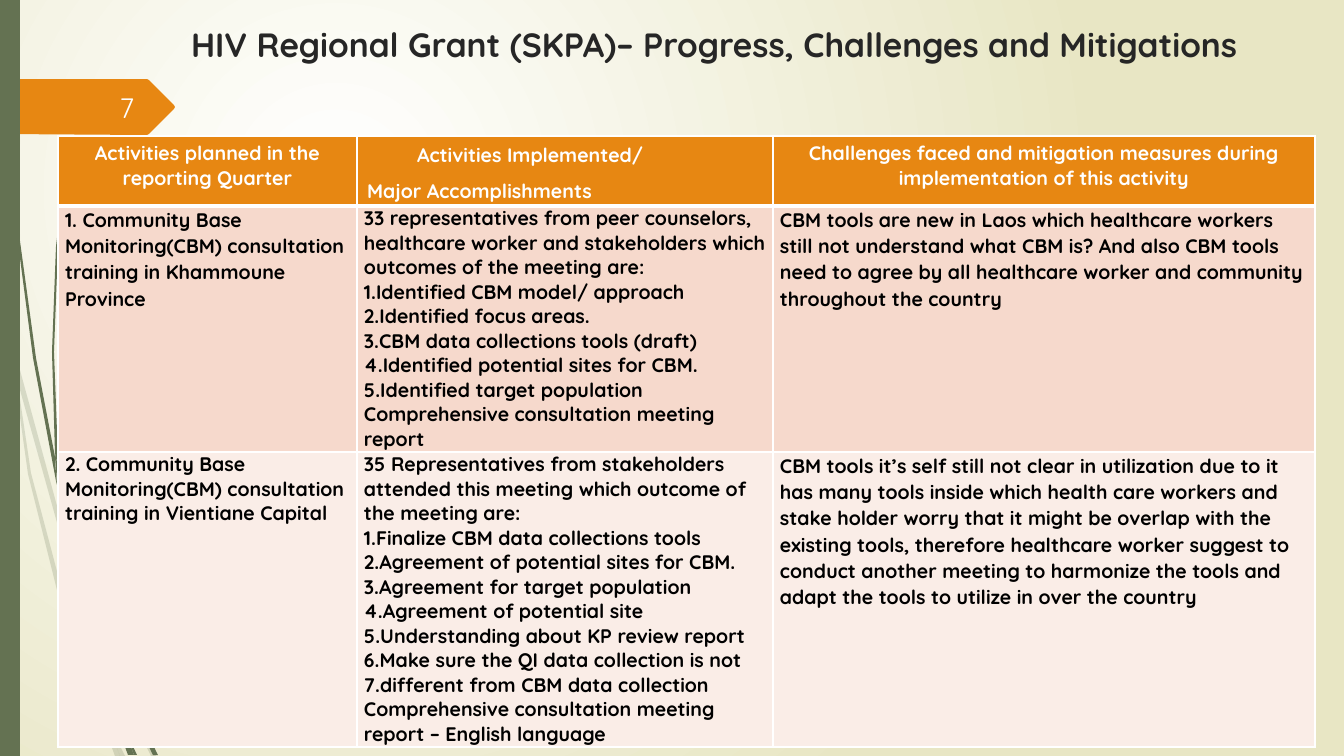
"""Build the regional grant progress slide with its activity table."""
import dataclasses

import lxml.etree
import pptx
import pptx.dml.color
import pptx.enum.shapes
import pptx.enum.text
import pptx.oxml
import pptx.oxml.ns
import pptx.util

PX = 914400 / 100.8
ALIGN = pptx.enum.text.PP_ALIGN
ANCHOR = pptx.enum.text.MSO_ANCHOR
qn = pptx.oxml.ns.qn


@dataclasses.dataclass(frozen=True)
class Theme:
    """Colours, font and type sizes."""
    font: str = "Quicksand"
    green: str = "647252"
    orange: str = "E78712"
    row_fills: tuple = ("E78712", "F6D9CC", "FAEDE7")
    white: str = "FFFFFF"
    cream: str = "E8E6C4"
    number: str = "FEFFFF"
    title: str = "262626"
    body: str = "000000"
    title_pt: int = 24
    number_pt: int = 20
    table_pt: int = 14


theme = Theme()


def add_run(p, text, size, color, bold=True):
    """Add one formatted run."""
    r = p.add_run()
    r.text = text
    r.font.name = theme.font
    r.font.size = pptx.util.Pt(size)
    r.font.bold = bold
    r.font.color.rgb = pptx.dml.color.RGBColor.from_string(color)


def paint(sp, color):
    """Give a shape a flat fill without line or shadow."""
    sp.fill.solid()
    sp.fill.fore_color.rgb = pptx.dml.color.RGBColor.from_string(color)
    sp.line.fill.background()
    sp.shadow.inherit = False


prs = pptx.Presentation()
prs.slide_width, prs.slide_height = round(1344 * PX), round(756 * PX)
s = prs.slides.add_slide(prs.slide_layouts[5])

s.background.fill.gradient()
grad = s.background.fill._fill._gradFill
for child in list(grad):
    grad.remove(child)
stops = lxml.etree.SubElement(grad, qn("a:gsLst"))
for pos, color in ((0, theme.white), (100000, theme.cream)):
    stop = lxml.etree.SubElement(stops, qn("a:gs"), pos=str(pos))
    lxml.etree.SubElement(stop, qn("a:srgbClr"), val=color)
circle = lxml.etree.SubElement(grad, qn("a:path"), path="circle")
lxml.etree.SubElement(circle, qn("a:fillToRect"),
                      l="50000", t="50000", r="100000", b="100000")

faint_stalks = [
    [(11, 353), (9, 325), (0, 284), (0, 301), (10, 347)],
    [(58, 526), (85, 604), (86, 591), (62, 524), (14, 348), (17, 379)],
    [(93, 612), (89, 601), (89, 615), (124, 700), (151, 756), (156, 756), (128, 698)],
    [(120, 756), (125, 756), (106, 717)],
    [(94, 688), (71, 624), (31, 473), (17, 379), (11, 353), (28, 474),
     (66, 626), (93, 699), (102, 720), (100, 713)],
    [(102, 720), (115, 756), (120, 756)],
    [(97, 698), (94, 688), (100, 713), (102, 720), (120, 756), (106, 717)],
]
dark_stalks = [
    [(7, 111), (17, 235), (33, 358), (56, 481), (57, 485), (55, 461), (55, 457),
     (36, 358), (19, 234), (8, 110), (5, 48), (4, 0), (3, 0), (4, 48)],
    [(114, 654), (111, 646), (111, 661), (133, 714), (153, 755), (158, 755), (137, 712)],
    [(111, 697), (99, 662), (73, 560), (65, 509), (57, 481), (69, 561),
     (94, 664), (112, 714), (118, 728), (117, 723)],
    [(60, 476), (58, 457), (54, 352), (58, 247), (64, 195), (71, 142),
     (70, 142), (62, 195), (56, 247), (52, 352), (55, 453)],
    [(134, 755), (137, 755), (123, 725)],
    [(57, 481), (65, 509), (60, 476), (55, 453), (55, 457)],
    [(118, 728), (128, 755), (132, 755)],
    [(117, 712), (111, 697), (117, 723), (118, 728), (131, 755), (134, 755), (123, 725)],
]
number_tag = [(0, 79), (147, 79), (149, 80), (174, 105), (175, 107),
              (174, 109), (149, 134), (147, 135), (0, 134)]
outlines = [(points, theme.green, 20) for points in faint_stalks]
outlines += [(points, theme.green, 100) for points in dark_stalks]
outlines.append((number_tag, theme.orange, 100))
for points, color, opacity in outlines:
    builder = s.shapes.build_freeform(*points[0], scale=PX)
    builder.add_line_segments(points[1:], close=True)
    sp = builder.convert_to_shape()
    paint(sp, color)
    if opacity < 100:
        rgb = sp._element.spPr.find(qn("a:solidFill")).find(qn("a:srgbClr"))
        lxml.etree.SubElement(rgb, qn("a:alpha"), val=str(opacity * 1000))

side_bar = s.shapes.add_shape(pptx.enum.shapes.MSO_SHAPE.RECTANGLE,
                              0, 0, round(20 * PX), round(756 * PX))
paint(side_bar, theme.green)

title = s.shapes.title
title.left, title.top, title.width, title.height = (
    round(v * PX) for v in (181, 19, 1098, 68))
tf = title.text_frame
tf.word_wrap = True
tf.vertical_anchor = ANCHOR.TOP
p = tf.paragraphs[0]
p.alignment = ALIGN.LEFT
add_run(p, "HIV Regional Grant (SKPA)– Progress, Challenges and Mitigations",
        theme.title_pt, theme.title)

number = s.shapes.add_textbox(*(round(v * PX) for v in (58, 87, 86, 40)))
tf = number.text_frame
tf.word_wrap = True
tf.vertical_anchor = ANCHOR.MIDDLE
p = tf.paragraphs[0]
p.alignment = ALIGN.RIGHT
add_run(p, "7", theme.number_pt, theme.number, bold=False)

rows = [
    [["Activities planned in the reporting Quarter"],
     ["Activities Implemented/", "Major Accomplishments"],
     ["Challenges faced and mitigation measures during implementation of this activity"]],
    [["1. Community Base Monitoring(CBM) consultation training in Khammoune Province"],
     ["33 representatives from peer counselors, healthcare worker and stakeholders "
      "which outcomes of the meeting are:",
      "1.Identified CBM model/ approach",
      "2.Identified focus areas.",
      "3.CBM data collections tools (draft)",
      "4.Identified potential sites for CBM.",
      "5.Identified target population",
      "Comprehensive consultation meeting report"],
     ["CBM tools are new in Laos which healthcare workers still not understand what "
      "CBM is? And also CBM tools need to agree by all healthcare worker and "
      "community throughout the country"]],
    [["2. Community Base Monitoring(CBM) consultation training in Vientiane Capital"],
     ["35 Representatives from stakeholders attended this meeting which outcome of "
      "the meeting are:",
      "1.Finalize CBM data collections tools",
      "2.Agreement of potential sites for CBM.",
      "3.Agreement for target population",
      "4.Agreement of potential site",
      "5.Understanding about KP review report",
      "6.Make sure the QI data collection is not 7.different from CBM data collection",
      "Comprehensive consultation meeting report – English language"],
     ["CBM tools it’s self still not clear in utilization due to it has many tools "
      "inside which health care workers and stake holder worry that it might be "
      "overlap with the existing tools, therefore healthcare worker suggest to "
      "conduct another meeting to harmonize the tools and adapt the tools to "
      "utilize in over the country"]],
]
loose_cells = {(0, 1), (1, 0), (1, 2), (2, 2)}
col_widths, row_heights = (299, 416, 542), (70, 246, 295)
frame = s.shapes.add_table(3, 3, *(
    round(v * PX) for v in (58, 136, sum(col_widths), sum(row_heights))))
table = frame.table
for column, width in zip(table.columns, col_widths):
    column.width = round(width * PX)
for i, (row, height) in enumerate(zip(rows, row_heights)):
    table.rows[i].height = round(height * PX)
    for j, texts in enumerate(row):
        cell = table.cell(i, j)
        cell.fill.solid()
        cell.fill.fore_color.rgb = pptx.dml.color.RGBColor.from_string(theme.row_fills[i])
        if i > 0:
            cell.margin_left = cell.margin_right = round(7 * PX)
            cell.margin_top = cell.margin_bottom = 0
        tf = cell.text_frame
        for k, text in enumerate(texts):
            p = tf.paragraphs[0] if k == 0 else tf.add_paragraph()
            p.alignment = ALIGN.CENTER if i == 0 and j != 1 else ALIGN.LEFT
            if (i, j) in loose_cells and k == 0:
                p.line_spacing = 1.07
            if (i, j, k) == (0, 1, 0):
                p.alignment = ALIGN.JUSTIFY
                p.space_after = pptx.util.Pt(8)
                p._p.get_or_add_pPr().set("marL", str(round(50 * PX)))
            add_run(p, text, theme.table_pt, theme.white if i == 0 else theme.body)
        tc_pr = cell._tc.get_or_add_tcPr()
        for n, side in enumerate("LRTB"):
            thick = (i, side) in ((0, "B"), (1, "T"))
            ln = pptx.oxml.parse_xml(
                f'<a:ln{side} {pptx.oxml.ns.nsdecls("a")} w="{38100 if thick else 12700}">'
                f'<a:solidFill><a:srgbClr val="{theme.white}"/></a:solidFill></a:ln{side}>')
            tc_pr.insert(n, ln)

prs.save("out.pptx")
